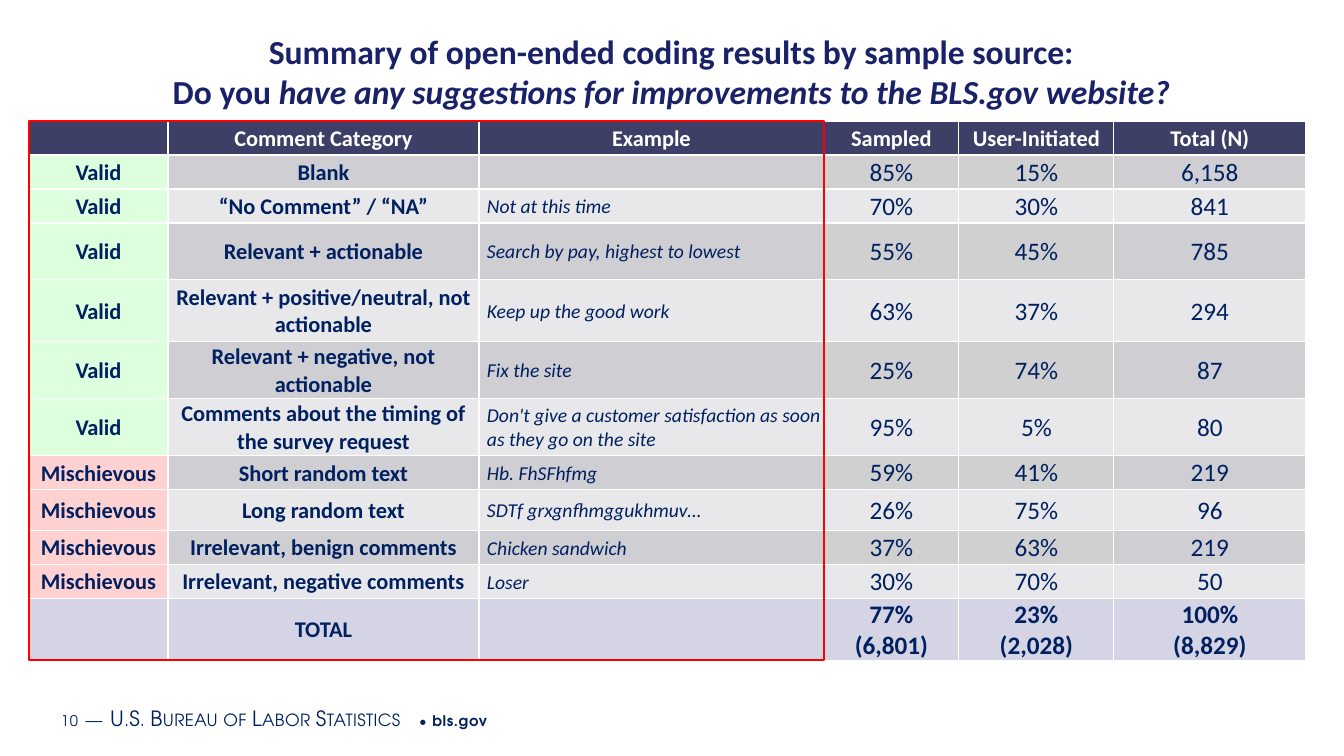
"""Builds the slide summarising open-ended coding results by sample source."""
from lxml.etree import SubElement
from pptx import Presentation
from pptx.dml.color import RGBColor
from pptx.enum.shapes import MSO_SHAPE
from pptx.enum.text import MSO_ANCHOR, PP_ALIGN
from pptx.oxml.ns import qn
from pptx.util import Pt

PX = 914400 / 100.8
COLORS = {
    "title": "192168", "navy": "002060", "white": "FFFFFF", "red": "FF0000",
    "header": "3E3F67", "total": "D4D4E5", "Valid": "DDFFDD", "Mischievous": "FFD1D1",
    "dark": "CECED3", "dark_share": "D0D0D0", "light": "E8E8EB",
}
ROWS = [
    ("", "Comment Category", "Example", "Sampled", "User-Initiated", "Total (N)"),
    ("Valid", "Blank", "", "85%", "15%", "6,158"),
    ("Valid", "“No Comment” / “NA”", "Not at this time", "70%", "30%", "841"),
    ("Valid", "Relevant + actionable", "Search by pay, highest to lowest", "55%", "45%", "785"),
    ("Valid", "Relevant + positive/neutral, not actionable", "Keep up the good work",
     "63%", "37%", "294"),
    ("Valid", "Relevant + negative, not actionable", "Fix the site", "25%", "74%", "87"),
    ("Valid", "Comments about the timing of the survey request",
     "Don't give a customer satisfaction as soon as they go on the site", "95%", "5%", "80"),
    ("Mischievous", "Short random text", "Hb. FhSFhfmg", "59%", "41%", "219"),
    ("Mischievous", "Long random text", "SDTf grxgnfhmggukhmuv…", "26%", "75%", "96"),
    ("Mischievous", "Irrelevant, benign comments", "Chicken sandwich", "37%", "63%", "219"),
    ("Mischievous", "Irrelevant, negative comments", "Loser", "30%", "70%", "50"),
    ("", "TOTAL", "", "77%\n(6,801)", "23%\n(2,028)", "100%\n(8,829)"),
]
COL_WIDTHS = [139, 311, 345, 135, 155, 192]
ROW_HEIGHTS = [34, 34, 34, 57, 62, 57, 57, 34, 41, 34, 34, 61]
LEFT, TOP = 29, 121


def px(*values):
    """Turn pixel lengths into EMU."""
    return [round(v * PX) for v in values]


def add_run(p, text, size, color, bold=False, italic=False, font="Calibri"):
    """Add one formatted run to a paragraph."""
    r = p.add_run()
    r.text = text
    r.font.name, r.font.size = font, Pt(size)
    r.font.bold, r.font.italic = bold, italic
    r.font.color.rgb = RGBColor.from_string(COLORS[color])
    return r


prs = Presentation()
prs.slide_width, prs.slide_height = px(1344, 756)
s = prs.slides.add_slide(prs.slide_layouts[6])

tf = s.shapes.add_textbox(*px(54, 698, 854, 40)).text_frame
tf.word_wrap = True
tf.vertical_anchor = MSO_ANCHOR.MIDDLE
tf.margin_left, tf.margin_right, tf.margin_top, tf.margin_bottom = px(7, 7, 4, 4)
for text, size, spacing, small_caps, bold in [
    ("10", 10.5, 50, False, False),
    (" ", 16, 50, False, False),
    ("—", 15, 30, True, False),
    (" ", 16, 50, False, False),
    ("U.S. Bureau of Labor Statistics", 15, 30, True, False),
    (" • ", 10.5, 50, False, False),
    ("bls.gov", 10.5, 50, False, True),
]:
    r = add_run(tf.paragraphs[0], text, size, "navy", bold, font="TeX Gyre Adventor")
    rPr = r._r.get_or_add_rPr()
    rPr.set("spc", str(spacing))
    if small_caps:
        rPr.set("cap", "small")

tf = s.shapes.add_textbox(*px(54, 22, 1235, 98)).text_frame
tf.word_wrap = True
tf.vertical_anchor = MSO_ANCHOR.MIDDLE
p = tf.paragraphs[0]
p.alignment = PP_ALIGN.CENTER
add_run(p, "Summary of open-ended coding results by sample source:", 24, "title", True)
p.add_line_break()
add_run(p, "Do you ", 24, "title", True)
add_run(p, "have any suggestions for improvements to the BLS.gov website?", 24, "title", True, True)

width, height = sum(COL_WIDTHS), sum(ROW_HEIGHTS)
table = s.shapes.add_table(len(ROWS), len(COL_WIDTHS), *px(LEFT, TOP, width, height)).table
for column, w in zip(table.columns, px(*COL_WIDTHS)):
    column.width = w
for row, h in zip(table.rows, px(*ROW_HEIGHTS)):
    row.height = h

last = len(ROWS) - 1
for i, values in enumerate(ROWS):
    for j, value in enumerate(values):
        cell = table.cell(i, j)
        cell.vertical_anchor = MSO_ANCHOR.MIDDLE
        cell.margin_left, cell.margin_right, cell.margin_top, cell.margin_bottom = px(1, 1, 1, 0)

        tcPr = cell._tc.get_or_add_tcPr()
        for side in ("lnL", "lnR", "lnT", "lnB"):
            thick = (i, side) in [(0, "lnB"), (1, "lnT")]
            ln = SubElement(tcPr, qn("a:" + side), w=str(Pt(1.5 if thick else 1)))
            fill = SubElement(ln, qn("a:solidFill"))
            SubElement(fill, qn("a:srgbClr"), val=COLORS["white"])

        if i == 0:
            shade = "header"
        elif i == last:
            shade = "total"
        elif j == 0:
            shade = value
        elif i % 2 == 0:
            shade = "light"
        else:
            shade = "dark_share" if j in (3, 4) else "dark"
        cell.fill.solid()
        cell.fill.fore_color.rgb = RGBColor.from_string(COLORS[shade])

        example = j == 2 and i > 0
        size = 16 if i == 0 or j < 2 else 14 if example else 18
        bold = i in (0, last) or j < 2
        for k, line in enumerate(value.split("\n") if value else []):
            p = cell.text_frame.paragraphs[0] if k == 0 else cell.text_frame.add_paragraph()
            p.alignment = PP_ALIGN.LEFT if example else PP_ALIGN.CENTER
            if example:
                p._p.get_or_add_pPr().set("marL", str(px(7)[0]))
            add_run(p, line, size, "white" if i == 0 else "navy", bold, example)

sp = s.shapes.add_shape(MSO_SHAPE.RECTANGLE, *px(LEFT, TOP, sum(COL_WIDTHS[:3]), height))
sp.shadow.inherit = False
sp.fill.background()
sp.line.color.rgb = RGBColor.from_string(COLORS["red"])
sp.line.width = Pt(2)

prs.save("out.pptx")
